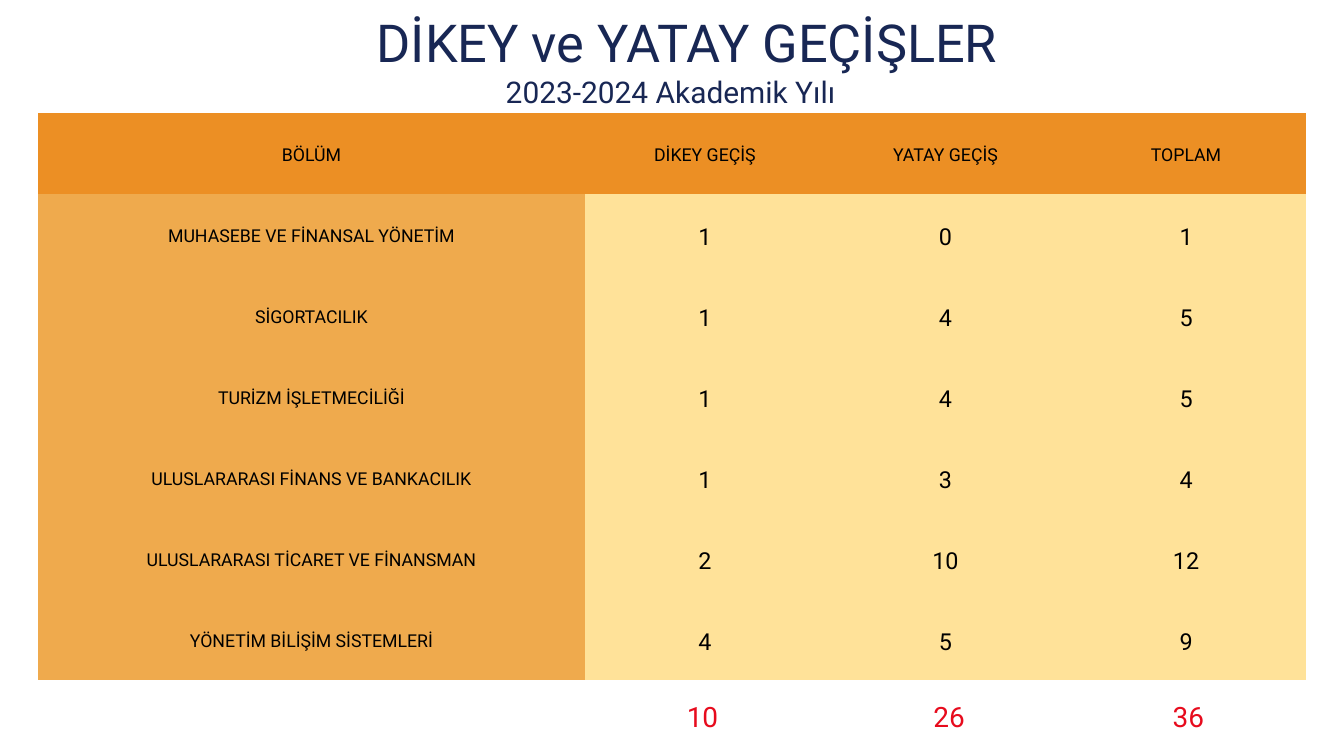
from lxml import etree
from pptx import Presentation
from pptx.dml.color import RGBColor
from pptx.enum.text import MSO_ANCHOR, MSO_AUTO_SIZE, PP_ALIGN
from pptx.oxml.ns import qn
from pptx.util import Inches, Pt

CENTER, JUSTIFY = PP_ALIGN.CENTER, PP_ALIGN.JUSTIFY
MIDDLE = MSO_ANCHOR.MIDDLE
FIT_SHAPE = MSO_AUTO_SIZE.SHAPE_TO_FIT_TEXT

NAVY = RGBColor(0x18, 0x27, 0x54)
BLACK = RGBColor(0x00, 0x00, 0x00)
RED = RGBColor(0xE7, 0x0B, 0x1D)
ORANGE = RGBColor(0xEC, 0x8F, 0x24)
LIGHT_ORANGE = RGBColor(0xEF, 0xAA, 0x4D)
CREAM = RGBColor(0xFF, 0xE2, 0x99)

FONT = "Roboto"
MARGINS = ("margin_left", "margin_top", "margin_right", "margin_bottom")
COL_WIDTHS = (8.13, 3.58, 3.58, 3.58)
ROW_HEIGHT = 8.44 / 7

HEADER = ("BÖLÜM", "DİKEY GEÇİŞ", "YATAY GEÇİŞ", "TOPLAM")
DEPARTMENTS = (
    ("MUHASEBE VE FİNANSAL YÖNETİM", 1, 0, 1),
    ("SİGORTACILIK", 1, 4, 5),
    ("TURİZM İŞLETMECİLİĞİ", 1, 4, 5),
    ("ULUSLARARASI FİNANS VE BANKACILIK", 1, 3, 4),
    ("ULUSLARARASI TİCARET VE FİNANSMAN", 2, 10, 12),
    ("YÖNETİM BİLİŞİM SİSTEMLERİ", 4, 5, 9),
)
TOTAL_BOXES = ((10.22, 0.59), (13.89, 0.69), (17.45, 0.63))


def write_text(tf, text, size, color, spacing, align=CENTER):
    p = tf.paragraphs[0]
    p.alignment = align
    p.line_spacing = Pt(size * spacing)
    r = p.add_run()
    r.text = text
    for name, value in {"name": FONT, "size": Pt(size)}.items():
        setattr(r.font, name, value)
    r.font.color.rgb = color


def add_text(s, box, text, size, color, spacing, align=CENTER):
    tf = s.shapes.add_textbox(*map(Inches, box)).text_frame
    layout = dict.fromkeys(MARGINS, 0) | {"word_wrap": True, "auto_size": FIT_SHAPE}
    for name, value in layout.items():
        setattr(tf, name, value)
    write_text(tf, text, size, color, spacing, align)


def format_cell(cell, text, size, fill):
    layout = dict.fromkeys(MARGINS, Inches(0.21)) | {"vertical_anchor": MIDDLE}
    for name, value in layout.items():
        setattr(cell, name, value)
    tcPr = cell._tc.get_or_add_tcPr()
    for side in ("a:lnL", "a:lnR", "a:lnT", "a:lnB"):
        line = etree.SubElement(tcPr, qn(side), w="0")
        etree.SubElement(line, qn("a:noFill"))
    cell.fill.solid()
    cell.fill.fore_color.rgb = fill
    write_text(cell.text_frame, text, size, BLACK, 1.4)


def add_transfer_table(s):
    rows = (HEADER, *DEPARTMENTS)
    box = (0.57, 1.68, sum(COL_WIDTHS), ROW_HEIGHT * len(rows))
    table = s.shapes.add_table(len(rows), len(HEADER), *map(Inches, box)).table
    for column, width in zip(table.columns, COL_WIDTHS):
        column.width = Inches(width)
    for i, values in enumerate(rows):
        table.rows[i].height = Inches(ROW_HEIGHT)
        for j, value in enumerate(values):
            size = 25 if i and j else 19
            fill = ORANGE if i == 0 else LIGHT_ORANGE if j == 0 else CREAM
            format_cell(table.cell(i, j), str(value), size, fill)


def add_totals(s):
    for j, (left, width) in enumerate(TOTAL_BOXES, start=1):
        total = sum(row[j] for row in DEPARTMENTS)
        add_text(s, (left, 10.33, width, 0.59), str(total), 30, RED, 1.4, JUSTIFY)


def main():
    """Build the slide of vertical and lateral transfers by department."""
    prs = Presentation()
    prs.slide_width, prs.slide_height = Inches(20), Inches(11.25)
    s = prs.slides.add_slide(prs.slide_layouts[6])
    add_text(s, (1.35, 0.23, 17.75, 0.89), "DİKEY ve YATAY GEÇİŞLER", 56, NAVY, 1.1)
    add_transfer_table(s)
    add_text(s, (6.07, 1.14, 7.82, 0.51), "2023-2024 Akademik Yılı", 32, NAVY, 1.1)
    add_totals(s)
    prs.save("out.pptx")


if __name__ == "__main__":
    main()
